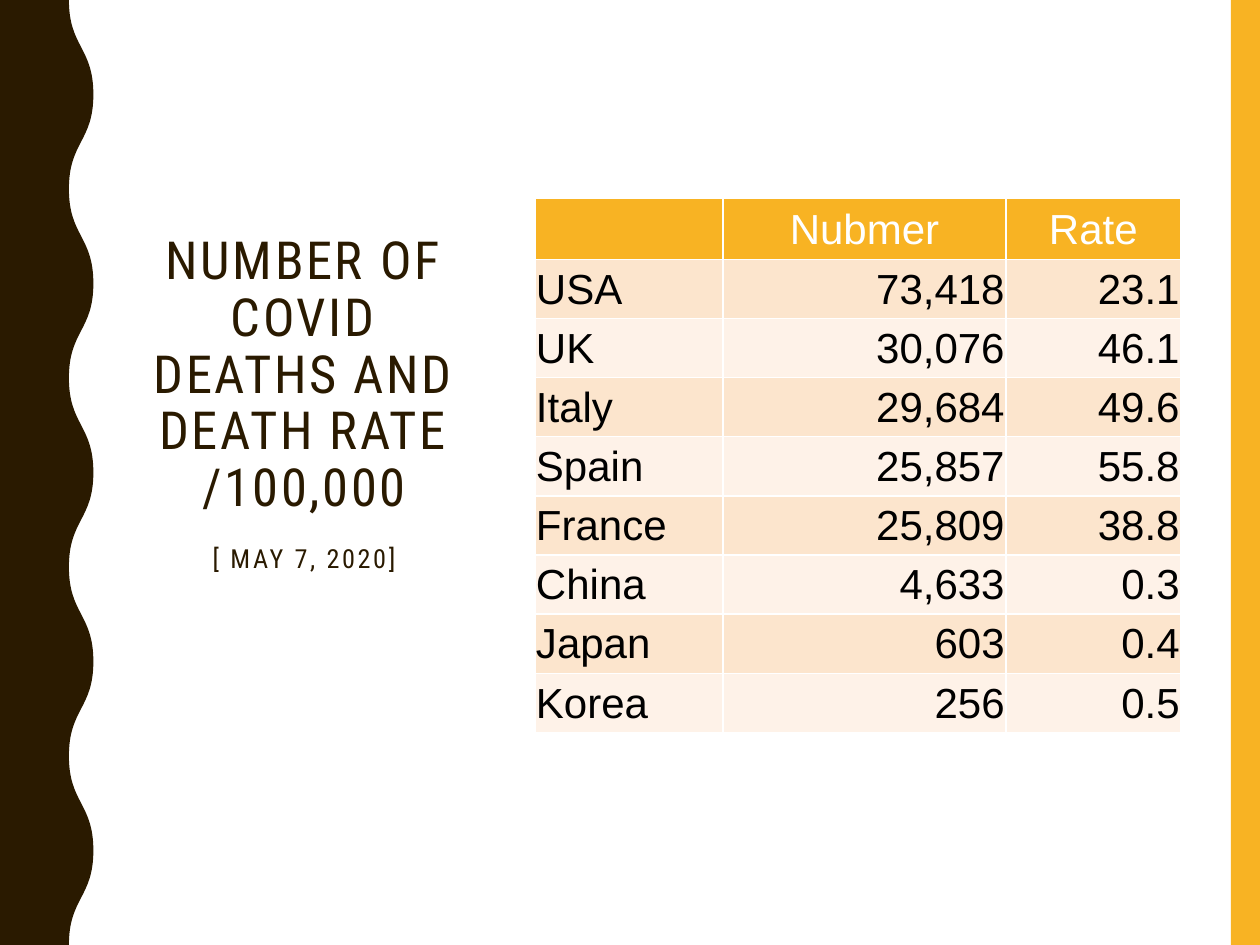
import pptx
import pptx.util
import pptx.dml.color
import pptx.enum.shapes
import pptx.enum.text
import pptx.oxml
import pptx.oxml.ns

Pt = pptx.util.Pt
RGBColor = pptx.dml.color.RGBColor
PP_ALIGN = pptx.enum.text.PP_ALIGN
MSO_ANCHOR = pptx.enum.text.MSO_ANCHOR
qn = pptx.oxml.ns.qn
NS = pptx.oxml.ns.nsdecls("a")

GOLD = RGBColor(0xF8, 0xB3, 0x23)
BROWN = RGBColor(0x2A, 0x1A, 0x00)
PEACH = RGBColor(0xFC, 0xE5, 0xCD)
CREAM = RGBColor(0xFE, 0xF2, 0xE8)
WHITE = RGBColor(0xFF, 0xFF, 0xFF)
BLACK = RGBColor(0x00, 0x00, 0x00)

ROWS = [
    ("", "Nubmer", "Rate"),
    ("USA", "73,418", "23.1"),
    ("UK", "30,076", "46.1"),
    ("Italy", "29,684", "49.6"),
    ("Spain", "25,857", "55.8"),
    ("France", "25,809", "38.8"),
    ("China", "4,633", "0.3"),
    ("Japan", "603", "0.4"),
    ("Korea", "256", "0.5"),
]
COLUMN_WIDTHS = (107.6, 161.6, 100)
HEADER_HEIGHT = 34.8


def paint(sp, color):
    sp.shadow.inherit = False
    sp.fill.solid()
    sp.fill.fore_color.rgb = color
    sp.line.fill.background()


def add_side_bar(slide, left, top, width, height):
    sp = slide.shapes.add_shape(
        pptx.enum.shapes.MSO_SHAPE.RECTANGLE, Pt(left), Pt(top), Pt(width), Pt(height))
    paint(sp, GOLD)


def add_wavy_edge(slide, left, top, width, height, trough=39.4, bends=10):
    half = height / bends
    wave = [(trough if i % 2 == 0 else width, i * half) for i in range(bends + 1)]
    corners = [(0, height), (0, 0)]
    points = [(Pt(left + x), Pt(top + y)) for x, y in wave + corners]
    builder = slide.shapes.build_freeform(*points[0])
    builder.add_line_segments(points[1:], close=True)
    sp = builder.convert_to_shape()
    paint(sp, BROWN)
    segments = list(sp._element.iter(qn("a:lnTo")))[:bends]
    for segment, (x0, y0), (x1, y1) in zip(segments, wave, wave[1:]):
        middle = (y0 + y1) / 2
        pts = "".join(f'<a:pt x="{Pt(x)}" y="{Pt(y)}"/>'
                      for x, y in ((x0, middle), (x1, middle), (x1, y1)))
        curve = pptx.oxml.parse_xml(f"<a:cubicBezTo {NS}>{pts}</a:cubicBezTo>")
        segment.getparent().replace(segment, curve)


def set_title(slide, left, top, width, height):
    sp = slide.shapes.title
    sp.left, sp.top, sp.width, sp.height = Pt(left), Pt(top), Pt(width), Pt(height)
    tf = sp.text_frame
    tf.word_wrap = True
    tf.auto_size = pptx.enum.text.MSO_AUTO_SIZE.NONE
    tf.vertical_anchor = MSO_ANCHOR.MIDDLE
    tf.margin_bottom = Pt(73.6)
    lines = (
        ("NUMBER OF COVID DEATHS AND DEATH RATE\v/100,000", 30, 0),
        ("[ MAY 7, 2020]", 15, 16),
    )
    for i, (text, size, gap) in enumerate(lines):
        p = tf.paragraphs[0] if i == 0 else tf.add_paragraph()
        p.text = text
        p.alignment = PP_ALIGN.CENTER
        p.line_spacing = 0.9
        p.space_before = Pt(gap)
        p.font.name = "Roboto Condensed"
        p.font.size = Pt(size)
        p.font.color.rgb = BROWN
        p._p.pPr.find(qn("a:defRPr")).set("spc", "150")


def set_borders(cell):
    tcPr = cell._tc.get_or_add_tcPr()
    for i, side in enumerate(("lnL", "lnR", "lnT", "lnB")):
        tcPr.insert(i, pptx.oxml.parse_xml(
            f'<a:{side} {NS} w="{Pt(1)}"><a:solidFill>'
            f'<a:srgbClr val="{WHITE}"/></a:solidFill></a:{side}>'))


def fill_cell(cell, text, row, column):
    header = row == 0
    cell.fill.solid()
    cell.fill.fore_color.rgb = GOLD if header else PEACH if row % 2 else CREAM
    cell.vertical_anchor = MSO_ANCHOR.MIDDLE
    cell.margin_left = cell.margin_right = cell.margin_top = Pt(0.7)
    cell.margin_bottom = Pt(0)
    set_borders(cell)
    if not text:
        return
    p = cell.text_frame.paragraphs[0]
    p.text = text
    if header:
        p.alignment = PP_ALIGN.CENTER
    else:
        p.alignment = PP_ALIGN.RIGHT if column else PP_ALIGN.LEFT
    p.font.name = "Arial"
    p.font.size = Pt(24)
    p.font.bold = False
    p.font.color.rgb = WHITE if header else BLACK


def add_death_table(slide, left, top, width, height):
    table = slide.shapes.add_table(
        len(ROWS), len(COLUMN_WIDTHS), Pt(left), Pt(top), Pt(width), Pt(height)).table
    for column, column_width in zip(table.columns, COLUMN_WIDTHS):
        column.width = Pt(column_width)
    body_height = (height - HEADER_HEIGHT) / (len(ROWS) - 1)
    for i, values in enumerate(ROWS):
        table.rows[i].height = Pt(body_height if i else HEADER_HEIGHT)
        for j, text in enumerate(values):
            fill_cell(table.cell(i, j), text, i, j)


def main():
    prs = pptx.Presentation()
    prs.slide_width, prs.slide_height = Pt(720), Pt(540)
    slide = prs.slides.add_slide(prs.slide_layouts[5])
    add_side_bar(slide, 703.4, 0, 16.6, 540)
    add_wavy_edge(slide, 0, 0, 53.4, 540)
    set_title(slide, 73.8, 106, 200, 320)
    add_death_table(slide, 305.6, 113.4, sum(COLUMN_WIDTHS), 305.2)
    prs.save("out.pptx")


if __name__ == "__main__":
    main()
